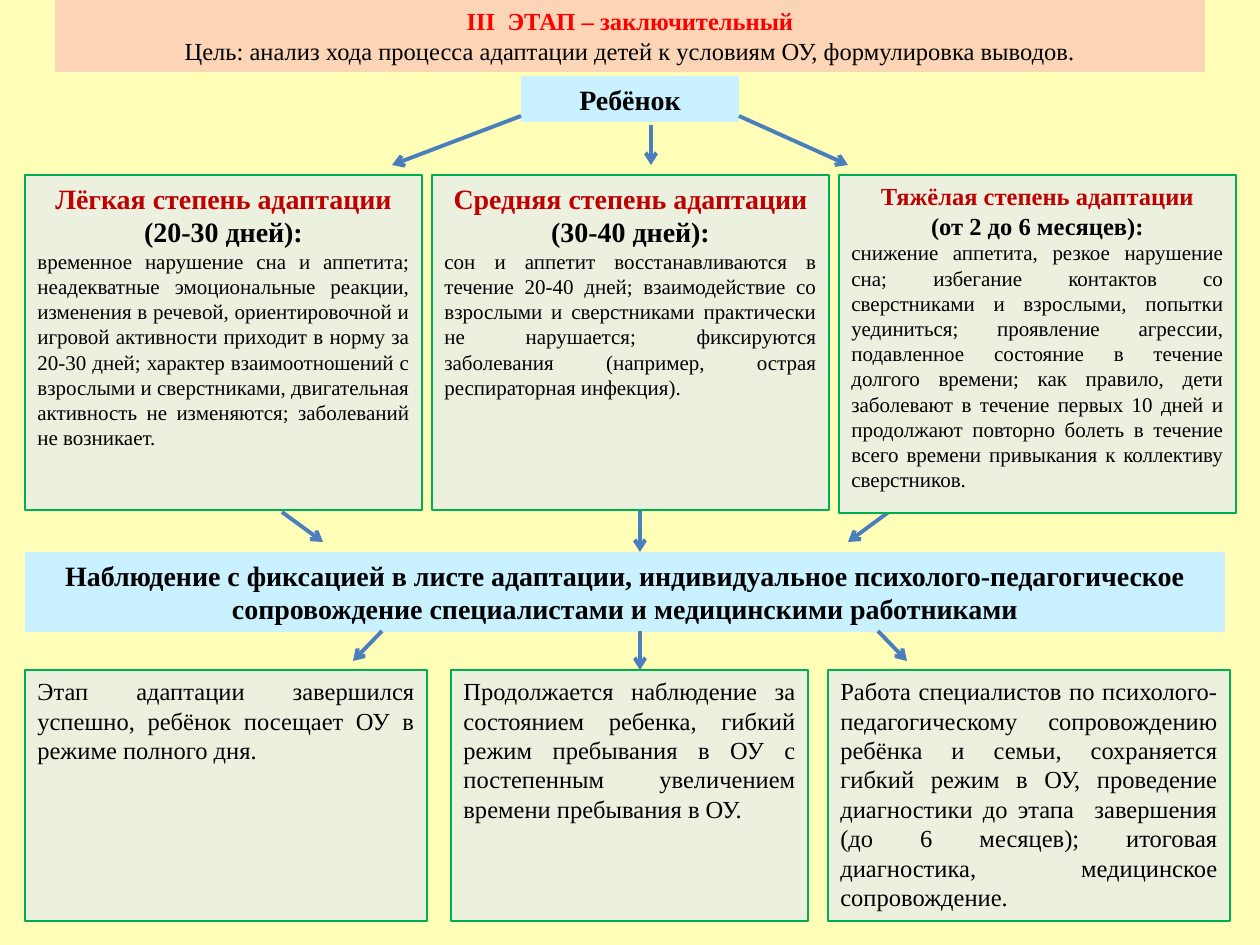
from dataclasses import dataclass

from lxml.etree import SubElement as Sub
from pptx import Presentation
from pptx.dml.color import RGBColor as Rgb
from pptx.enum.shapes import MSO_CONNECTOR as Conn
from pptx.enum.text import MSO_ANCHOR as Anchor, PP_ALIGN as Align
from pptx.oxml.ns import qn
from pptx.util import Pt

SCALE = 914400 / 126


@dataclass(frozen=True)
class Theme:
    """Colours, font and type sizes of the slide."""
    font: str = "Times New Roman"
    page: str = "FFFFB8"
    peach: str = "FBD5B5"
    sky: str = "C9F1FF"
    sage: str = "EBF1DE"
    edge: str = "00B050"
    arrow: str = "4B7EBC"
    ink: str = "000000"
    red: str = "FF0000"
    wine: str = "C00000"
    big: int = 16
    mid: int = 14
    small: int = 12


T = Theme()


def px(num):
    """Turn px into EMU."""
    return round(num * SCALE)


def head(text, size, color=T.ink):
    """Describe a bold centred line."""
    return text, size, color, True, Align.CENTER


def body(text, size, align=Align.JUSTIFY):
    """Describe a plain paragraph."""
    return text, size, T.ink, False, align


def block(slide, box, fill, lines, edge=None):
    """Place a filled box of text lines."""
    shape = slide.shapes.add_textbox(*map(px, box))
    shape.fill.solid()
    shape.fill.fore_color.rgb = Rgb.from_string(fill)
    if edge:
        shape.line.color.rgb = Rgb.from_string(edge)
        shape.line.width = Pt(0.75)
    frame = shape.text_frame
    frame.word_wrap = True
    frame.vertical_anchor = Anchor.TOP
    frame.text = "\n".join(line[0] for line in lines)
    for para, (_, size, color, bold, align) in zip(frame.paragraphs, lines):
        para.alignment = align
        for run in para.runs:
            font = run.font
            font.name, font.size, font.bold = T.font, Pt(size), bold
            font.color.rgb = Rgb.from_string(color)


def arrows(slide, left, top, ends):
    """Draw arrows whose ends are offsets from a corner."""
    for x1, y1, x2, y2 in ends:
        line = slide.shapes.add_connector(
            Conn.STRAIGHT, px(left + x1), px(top + y1),
            px(left + x2), px(top + y2))
        line.line.color.rgb = Rgb.from_string(T.arrow)
        line.line.width = Pt(2.25)
        Sub(line.line._get_or_add_ln(), qn("a:tailEnd"), type="arrow")
        Sub(line._element.spPr, qn("a:effectLst"))


def title(slide, box):
    """Place the stage name and its goal."""
    block(slide, box, T.peach, [
        head("III  ЭТАП – заключительный", T.mid, T.red),
        body("Цель: анализ хода процесса адаптации детей к условиям ОУ, "
             "формулировка выводов.", T.mid, Align.CENTER)])


def child(slide, box):
    """Place the child box with three arrows out of it."""
    left, top, wide, _ = box
    block(slide, box, T.sky, [head("Ребёнок", T.big)])
    arrows(slide, left, top, [
        (0, 40, -129, 89), (wide, 40, wide + 109, 89), (130, 49, 130, 89)])


def levels(slide, box):
    """Place three equal columns for the degrees of adaptation."""
    left, top, wide, high = box
    gap = 10
    col = (wide - 2 * gap) / 3
    arrows(slide, left, top, [
        (615, 328, 615, 377), (903, 308, 823, 367), (257, 337, 298, 367)])
    data = [
        ("Лёгкая степень адаптации", "(20-30 дней):", T.big, 0,
         "временное нарушение сна и аппетита; неадекватные эмоциональные "
         "реакции, изменения в речевой, ориентировочной и игровой активности "
         "приходит в норму за 20-30 дней; характер взаимоотношений с "
         "взрослыми и сверстниками, двигательная активность не изменяются; "
         "заболеваний не возникает."),
        ("Средняя степень адаптации", "(30-40 дней):", T.big, 0,
         "сон и аппетит восстанавливаются в течение 20-40 дней; "
         "взаимодействие со взрослыми и сверстниками практически не "
         "нарушается; фиксируются заболевания (например, острая "
         "респираторная инфекция)."),
        ("Тяжёлая степень адаптации", "(от 2 до 6 месяцев):", T.mid, 3,
         "снижение аппетита, резкое нарушение сна; избегание контактов со "
         "сверстниками и взрослыми, попытки уединиться; проявление агрессии, "
         "подавленное состояние в течение долгого времени; как правило, дети "
         "заболевают в течение первых 10 дней и продолжают повторно болеть в "
         "течение всего времени привыкания к коллективу сверстников.")]
    for num, (name, term, size, more, text) in enumerate(data):
        spot = left + num * (col + gap), top, col, high + more
        block(slide, spot, T.sage, [
            head(name, size, T.wine), head(term, size),
            body(text, T.small)], T.edge)


def watch(slide, box):
    """Place the observation band with three arrows below it."""
    left, top, _, high = box
    block(slide, box, T.sky, [head(
        "Наблюдение с фиксацией в листе адаптации, индивидуальное "
        "психолого-педагогическое сопровождение специалистами и "
        "медицинскими работниками", T.big)])
    arrows(slide, left, top + high, [
        (615, -1, 615, 38), (853, -1, 882, 29), (357, -1, 328, 29)])


def results(slide, box):
    """Place the three outcomes, the middle one narrower."""
    left, top, wide, high = box
    side, mid = 402, 357
    data = [
        (0, side,
         "Этап адаптации завершился успешно, ребёнок посещает ОУ в режиме "
         "полного дня."),
        (426, mid,
         "Продолжается наблюдение за состоянием ребенка, гибкий режим "
         "пребывания в ОУ с постепенным увеличением времени пребывания "
         "в ОУ."),
        (wide - side, side,
         "Работа специалистов по психолого-педагогическому сопровождению "
         "ребёнка и семьи, сохраняется гибкий режим в ОУ, проведение "
         "диагностики до этапа  завершения (до 6 месяцев); итоговая "
         "диагностика, медицинское сопровождение.")]
    for shift, col, text in data:
        block(slide, (left + shift, top, col, high), T.sage,
              [body(text, T.mid)], T.edge)


def main():
    """Build the slide and save it."""
    deck = Presentation()
    deck.slide_width, deck.slide_height = px(1260), px(945)
    slide = deck.slides.add_slide(deck.slide_layouts[6])
    fill = slide.background.fill
    fill.solid()
    fill.fore_color.rgb = Rgb.from_string(T.page)
    title(slide, (55, 0, 1150, 72))
    child(slide, (521, 76, 218, 46))
    levels(slide, (25, 175, 1211, 335))
    watch(slide, (25, 552, 1200, 80))
    results(slide, (25, 670, 1205, 251))
    deck.save("out.pptx")


if __name__ == "__main__":
    main()
